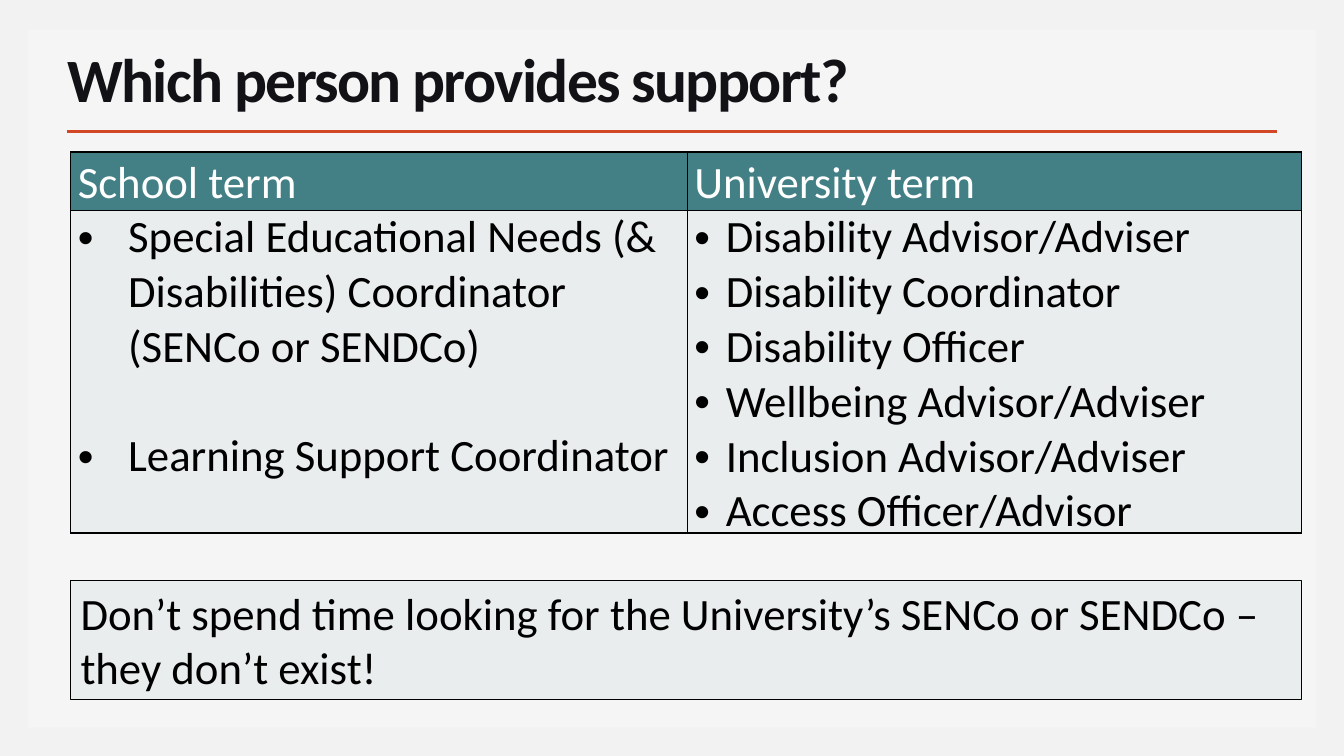
from lxml import etree
from pptx import Presentation
from pptx.dml.color import RGBColor
from pptx.enum import shapes, text
from pptx.oxml.ns import qn
from pptx.util import Cm, Pt

INK, TEAL, PALE, ORANGE = "000000", "438086", "E9EDED", "D24726"
HEADINGS = ["School term", "University term"]
SCHOOL_ROLES = [
    "Special Educational Needs (& Disabilities) Coordinator (SENCo or SENDCo)",
    "Learning Support Coordinator",
]
UNIVERSITY_ROLES = [
    "Disability Advisor/Adviser",
    "Disability Coordinator",
    "Disability Officer",
    "Wellbeing Advisor/Adviser",
    "Inclusion Advisor/Adviser",
    "Access Officer/Advisor",
]


def rgb(value):
    return RGBColor.from_string(value)


def paint(fill, color):
    fill.solid()
    fill.fore_color.rgb = rgb(color)


def write(frame, lines, size=32, color=INK, bold=False, leading=1.0,
          tracking=None, indent=None, gap=0, after=0):
    """Fill a text frame, one paragraph per line; an indent in cm adds bullets."""
    for index, line in enumerate(lines):
        paragraph = frame.add_paragraph() if index else frame.paragraphs[0]
        paragraph.alignment = text.PP_ALIGN.LEFT
        paragraph.line_spacing = leading
        paragraph.space_before = Pt(gap if index else 0)
        paragraph.space_after = Pt(after)
        run = paragraph.add_run()
        run.text = line
        run.font.name, run.font.size, run.font.bold = "Calibri", Pt(size), bold
        run.font.color.rgb = rgb(color)
        if tracking:
            run.font._element.set("spc", str(round(tracking * 100)))
        if indent:
            properties = paragraph._p.get_or_add_pPr()
            properties.set("marL", str(Cm(indent)))
            properties.set("indent", str(-Cm(indent)))
            etree.SubElement(properties, qn("a:buFont")).set("typeface", "Arial")
            etree.SubElement(properties, qn("a:buChar")).set("char", "•")


def add_panel(slide, box, color, outline=None):
    panel = slide.shapes.add_shape(shapes.MSO_SHAPE.RECTANGLE, *map(Cm, box))
    panel.shadow.inherit = False
    paint(panel.fill, color)
    if outline:
        panel.line.color.rgb = rgb(outline)
        panel.line.width = Pt(0.75)
    else:
        panel.line.fill.background()
    return panel


def add_heading(slide, box, title):
    """Place the title with the rule beneath it."""
    left, top, width, height = box
    frame = slide.shapes.add_textbox(*map(Cm, box)).text_frame
    frame.word_wrap = True
    frame.vertical_anchor = text.MSO_ANCHOR.BOTTOM
    write(frame, [title], size=44, color="111116", bold=True,
          leading=0.85, tracking=-1.2)

    rule_y = Cm(top + height + 0.3)
    rule = slide.shapes.add_connector(
        shapes.MSO_CONNECTOR.STRAIGHT,
        Cm(left + 0.23), rule_y, Cm(left + width + 0.1), rule_y)
    rule.line.color.rgb = rgb(ORANGE)
    rule.line.width = Pt(2)
    etree.SubElement(rule._element.spPr, qn("a:effectLst"))


def style_cell(cell, color):
    cell.margin_left = cell.margin_right = Cm(0.18)
    cell.margin_top = cell.margin_bottom = 0
    properties = cell._tc.get_or_add_tcPr()
    for side in ("lnL", "lnR", "lnT", "lnB"):
        border = etree.SubElement(properties, qn(f"a:{side}"), w=str(Pt(1)))
        solid = etree.SubElement(border, qn("a:solidFill"))
        etree.SubElement(solid, qn("a:srgbClr"), val=INK)
    paint(cell.fill, color)


def add_terms_table(slide, box):
    left, top, width, height = box
    table = slide.shapes.add_table(2, 2, *map(Cm, box)).table
    school_width, header_height = 15.54, 1.47
    table.columns[0].width = Cm(school_width)
    table.columns[1].width = Cm(width - school_width)
    table.rows[0].height = Cm(header_height)
    table.rows[1].height = Cm(height - header_height)

    bodies = [
        (SCHOOL_ROLES, {"indent": 1.27, "gap": 39}),
        (UNIVERSITY_ROLES, {"indent": 0.79}),
    ]
    for column, (heading, (roles, layout)) in enumerate(zip(HEADINGS, bodies)):
        header, body = table.cell(0, column), table.cell(1, column)
        style_cell(header, TEAL)
        style_cell(body, PALE)
        write(header.text_frame, [heading], color="FFFFFF", leading=1.07, after=8)
        write(body.text_frame, roles, **layout)


def add_advice(slide, box, message):
    frame = add_panel(slide, box, PALE, outline=INK).text_frame
    frame.word_wrap = True
    frame.vertical_anchor = text.MSO_ANCHOR.TOP
    write(frame, [message])


def main():
    deck = Presentation()
    deck.slide_width, deck.slide_height = Cm(33.87), Cm(19.05)
    slide = deck.slides.add_slide(deck.slide_layouts[6])
    paint(slide.background.fill, "F2F2F2")

    add_panel(slide, (0.71, 0.74, 32.46, 17.6), "F5F5F5")
    add_heading(slide, (1.45, 1.24, 30.63, 1.78), "Which person provides support?")
    add_terms_table(slide, (1.78, 3.83, 31.01, 9.52))
    add_advice(slide, (1.78, 14.63, 31.01, 3),
               "Don’t spend time looking for the University’s SENCo or SENDCo – "
               "they don’t exist!")
    deck.save("out.pptx")


if __name__ == "__main__":
    main()
